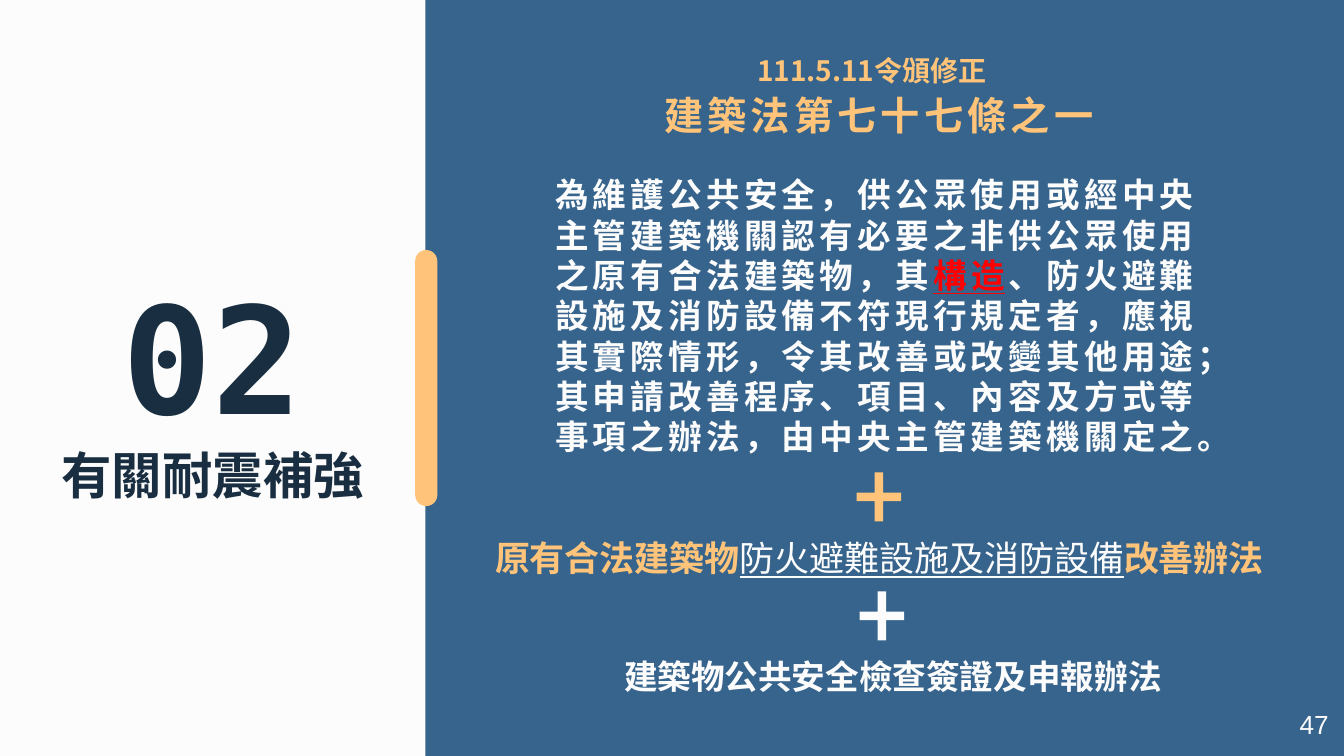
from pptx import Presentation
from pptx.dml.color import RGBColor
from pptx.enum.shapes import MSO_SHAPE as SHAPE
from pptx.enum.text import MSO_ANCHOR as ANCHOR, PP_ALIGN as ALIGN
from pptx.oxml.ns import qn
from pptx.util import Pt

NAVY = RGBColor(0x19, 0x2E, 0x40)
BLUE = RGBColor(0x37, 0x64, 0x8C)
ORANGE = RGBColor(0xFF, 0xC4, 0x79)
RED = RGBColor(0xFF, 0x00, 0x00)
PAPER = RGBColor(0xFC, 0xFC, 0xFC)

MONO = "DejaVu Sans Mono"
SANS_SC = "Noto Sans CJK SC"
SANS_TC = "Noto Sans CJK TC"
LINE_FACTOR = 1.2


def add_run(p, text, size, color, font, bold=True, underline=False, spacing=0):
    r = p.add_run()
    r.text = text
    f = r.font
    f.size, f.name, f.bold, f.underline = Pt(size), font, bold, underline
    f.color.rgb = color
    # East Asian font and letter spacing
    rPr = r._r.get_or_add_rPr()
    ea = rPr.makeelement(qn("a:ea"), {"typeface": font})
    rPr.find(qn("a:latin")).addnext(ea)
    if spacing:
        rPr.set("spc", str(spacing * 100))


def set_insets(tf, x, y):
    tf.margin_left = tf.margin_right = Pt(x)
    tf.margin_top = tf.margin_bottom = Pt(y)


def add_text(s, box, runs, size, font=SANS_SC, align=ALIGN.LEFT,
             insets=(7.2, 3.6), anchor=ANCHOR.TOP, spacing=0):
    """Add a one-paragraph box; runs are (text, colour, bold, underline)."""
    tf = s.shapes.add_textbox(*map(Pt, box)).text_frame
    tf.word_wrap = True
    tf.vertical_anchor = anchor
    set_insets(tf, *insets)
    p = tf.paragraphs[0]
    p.alignment = align
    p.line_spacing = Pt(size * LINE_FACTOR)
    for text, color, bold, underline in runs:
        add_run(p, text, size, color, font, bold, underline, spacing)


def add_block(s, kind, box, color, adjust=None):
    sp = s.shapes.add_shape(kind, *map(Pt, box))
    sp.shadow.inherit = False
    sp.fill.solid()
    sp.fill.fore_color.rgb = color
    sp.line.fill.background()
    if adjust is not None:
        sp.adjustments[0] = adjust


def fill_title(s):
    title = s.shapes.title
    title.left, title.top = Pt(0), Pt(185.8)
    title.width, title.height = Pt(303.8), Pt(169.2)
    tf = title.text_frame
    tf.word_wrap = True
    tf.vertical_anchor = ANCHOR.MIDDLE
    set_insets(tf, 9.4, 9.4)
    tf.margin_top = Pt(18)
    p = tf.paragraphs[0]
    p.alignment = ALIGN.CENTER
    p.line_spacing = 1.0
    add_run(p, "02", 106.7, NAVY, MONO)
    p.add_line_break()
    add_run(p, "有關耐震補強", 36, NAVY, MONO)


def main():
    prs = Presentation()
    prs.slide_width, prs.slide_height = Pt(960), Pt(540)
    s = prs.slides.add_slide(prs.slide_layouts[5])
    s.background.fill.solid()
    s.background.fill.fore_color.rgb = PAPER

    # Right panel, accent bar and section title
    add_block(s, SHAPE.RECTANGLE, (303.8, 0, 656.2, 540), BLUE)
    add_block(s, SHAPE.ROUNDED_RECTANGLE, (296.6, 178.6, 15.8, 182.9), ORANGE, 0.5)
    fill_title(s)

    # Amendment date and article heading
    add_text(s, (486.7, 34.6, 272.2, 31.7),
             [("111.5.11令頒修正", ORANGE, True, False)],
             20, SANS_TC, ALIGN.CENTER)
    add_text(s, (402.5, 61.9, 450.7, 41),
             [("建築法第七十七條之一", ORANGE, True, False)],
             28, align=ALIGN.CENTER, spacing=3)

    # Text of the article
    add_text(s, (389.5, 121, 480.2, 211), [
        ("為維護公共安全，供公眾使用或經中央主管建築機關認有必要之非供公眾使用"
         "之原有合法建築物，其", PAPER, True, False),
        ("構造", RED, True, True),
        ("、防火避難設施及消防設備不符現行規定者，應視其實際情形，令其改善或改變"
         "其他用途；其申請改善程序、項目、內容及方式等事項之辦法，由中央主管建築"
         "機關定之。", PAPER, True, False),
    ], 24, spacing=3)

    # Related regulations, joined by plus signs
    add_block(s, SHAPE.MATH_PLUS, (606.2, 331.2, 43.2, 47.5), ORANGE, 0.14)
    add_text(s, (344.2, 373.7, 571.7, 50.4), [
        ("原有合法建築物", ORANGE, True, False),
        ("防火避難設施及消防設備", PAPER, False, True),
        ("改善辦法", ORANGE, True, False),
    ], 25, insets=(9.4, 9.4))
    add_block(s, SHAPE.MATH_PLUS, (608.4, 416.2, 43.2, 47.5), PAPER, 0.14)
    add_text(s, (436.3, 459.4, 523.7, 50.4),
             [("建築物公共安全檢查簽證及申報辦法", PAPER, True, False)],
             24, insets=(9.4, 9.4))

    # Page number
    add_text(s, (740.2, 502.6, 216, 28.8), [("47", PAPER, False, False)],
             18.7, "Arial", ALIGN.RIGHT, anchor=ANCHOR.MIDDLE)

    prs.save("out.pptx")


if __name__ == "__main__":
    main()
